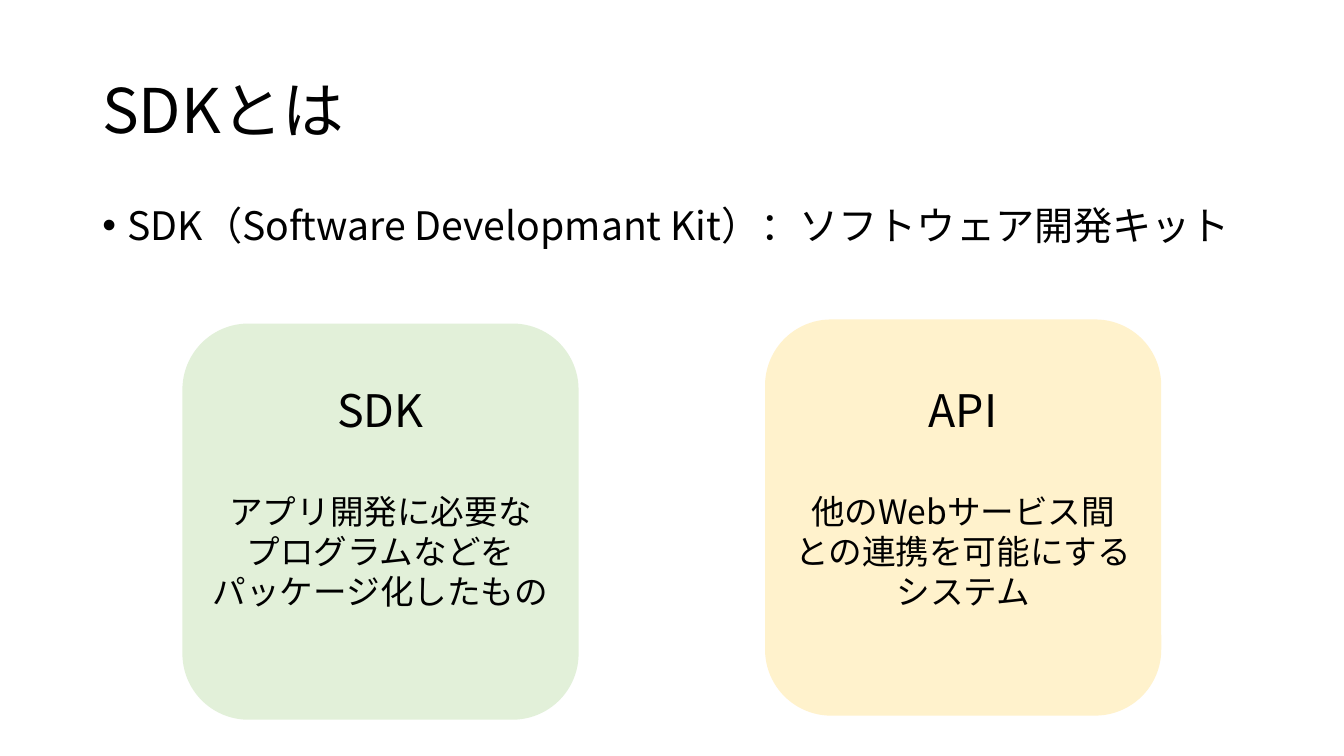
"""Build the slide that explains what an SDK is beside an API."""
from lxml.etree import SubElement
from pptx import Presentation
from pptx.dml.color import RGBColor
from pptx.enum.shapes import MSO_SHAPE
from pptx.enum.text import MSO_ANCHOR, PP_ALIGN
from pptx.oxml.ns import qn
from pptx.util import Pt

TITLE = "SDKとは"
DEFINITION = "SDK（Software Developmant Kit）：ソフトウェア開発キット"
CARDS = [
    {"heading": "SDK", "left": 130.3, "top": 231.1, "fill": "E2F0D9",
     "lines": ["アプリ開発に必要な", "プログラムなどを", "パッケージ化したもの"]},
    {"heading": "API", "left": 546.5, "top": 228.2, "fill": "FFF2CC",
     "lines": ["他のWebサービス間", "との連携を可能にする", "システム"]},
]
FONT = "Noto Sans CJK JP"
TEXT_COLOR = "000000"
MARGIN, CONTENT_WIDTH = 66, 828
CARD_SIZE = 283
CARD_TEXT_TOP, CARD_TEXT_WIDTH, CARD_TEXT_HEIGHT = 270, 257, 172
HEADING_GAP = 38.4
BULLET_INDENT = 18


def color(value):
    return RGBColor.from_string(value)


def add_text(slide, left, top, width, height, lines, wrap=True):
    text_box = slide.shapes.add_textbox(Pt(left), Pt(top), Pt(width), Pt(height))
    text_frame = text_box.text_frame
    text_frame.text = "\n".join(text for text, size in lines)
    text_frame.word_wrap = wrap
    for paragraph, (text, size) in zip(text_frame.paragraphs, lines):
        for run in paragraph.runs:
            run.font.size = Pt(size)
            run.font.name = FONT
            run.font.color.rgb = color(TEXT_COLOR)
            SubElement(run.font._element, qn("a:ea"), typeface=FONT)
    return text_frame


def add_bullet(paragraph):
    properties = paragraph._p.get_or_add_pPr()
    properties.set("marL", str(Pt(BULLET_INDENT)))
    properties.set("indent", str(-Pt(BULLET_INDENT)))
    SubElement(properties, qn("a:buFont"), typeface="Arial")
    SubElement(properties, qn("a:buChar"), char="•")


def add_card(slide, card):
    shape = slide.shapes.add_shape(
        MSO_SHAPE.ROUNDED_RECTANGLE, Pt(card["left"]), Pt(card["top"]),
        Pt(CARD_SIZE), Pt(CARD_SIZE))
    shape.shadow.inherit = False
    shape.fill.solid()
    shape.fill.fore_color.rgb = color(card["fill"])
    shape.line.fill.background()

    lines = [(card["heading"], 32)] + [(line, 24) for line in card["lines"]]
    text_left = card["left"] + (CARD_SIZE - CARD_TEXT_WIDTH) / 2
    text_frame = add_text(slide, text_left, CARD_TEXT_TOP, CARD_TEXT_WIDTH,
                          CARD_TEXT_HEIGHT, lines, wrap=False)
    for paragraph in text_frame.paragraphs:
        paragraph.alignment = PP_ALIGN.CENTER
    text_frame.paragraphs[0].space_after = Pt(HEADING_GAP)


def main():
    presentation = Presentation()
    presentation.slide_width, presentation.slide_height = Pt(960), Pt(540)
    slide = presentation.slides.add_slide(presentation.slide_layouts[6])

    title = add_text(slide, MARGIN, 28.8, CONTENT_WIDTH, 104.4, [(TITLE, 44)])
    title.vertical_anchor = MSO_ANCHOR.MIDDLE
    title.paragraphs[0].line_spacing = 0.9

    definition = add_text(slide, MARGIN, 144, CONTENT_WIDTH, 50.4, [(DEFINITION, 28)])
    definition.paragraphs[0].line_spacing = 0.9
    definition.paragraphs[0].space_before = Pt(10)
    add_bullet(definition.paragraphs[0])

    for card in CARDS:
        add_card(slide, card)
    presentation.save("out.pptx")


if __name__ == "__main__":
    main()
